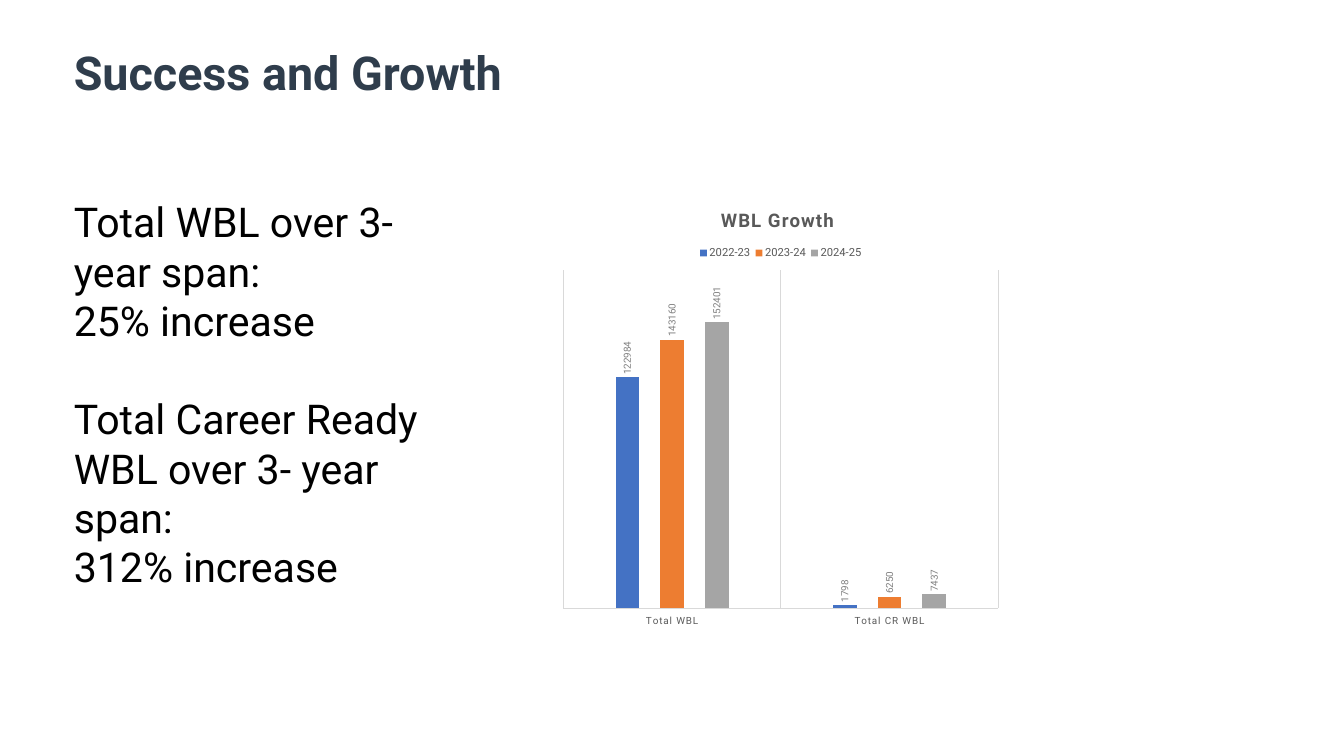
from typing import NamedTuple

from lxml.etree import SubElement
from pptx import Presentation
from pptx.chart.data import CategoryChartData
from pptx.dml.color import RGBColor
from pptx.enum.chart import XL_CHART_TYPE as ChartType
from pptx.enum.chart import XL_LABEL_POSITION as LabelPosition
from pptx.enum.chart import XL_LEGEND_POSITION as LegendPosition
from pptx.enum.chart import XL_TICK_LABEL_POSITION as TickLabelPosition
from pptx.enum.chart import XL_TICK_MARK as TickMark
from pptx.oxml.ns import qn
from pptx.util import Inches, Pt

FONT = "Roboto"
COLORS = {
    "title": "2F3D4C",
    "body": "000000",
    "chart_text": "595959",
    "label": "808080",
    "grid": "D9D9D9",
}


class YearSeries(NamedTuple):
    name: str
    values: tuple[int, int]
    color: str


class Finding(NamedTuple):
    measure: str
    increase: str


CATEGORIES = ("Total WBL", "Total CR WBL")
YEARS = (
    YearSeries("2022-23", (122984, 1798), "4472C4"),
    YearSeries("2023-24", (143160, 6250), "ED7D31"),
    YearSeries("2024-25", (152401, 7437), "A5A5A5"),
)
FINDINGS = (
    Finding("Total WBL over 3-year span:", "25% increase"),
    Finding("Total Career Ready WBL over 3- year span:", "312% increase"),
)


def style_font(font, size: float, color: str, bold: bool = False) -> None:
    font.name, font.size, font.bold = FONT, Pt(size), bold
    font.color.rgb = RGBColor.from_string(color)


def style_line(line) -> None:
    line.color.rgb = RGBColor.from_string(COLORS["grid"])
    line.width = Pt(0.75)


def add_text_box(slide, left: float, top: float, width: float, height: float):
    box = slide.shapes.add_textbox(
        Inches(left), Inches(top), Inches(width), Inches(height))
    box.text_frame.word_wrap = True
    return box.text_frame


def add_title(slide) -> None:
    frame = add_text_box(slide, 1, 0.6, 17.99, 1.2)
    frame.text = "Success and Growth"
    style_font(frame.paragraphs[0].runs[0].font, 50, COLORS["title"], True)


def add_findings(slide) -> None:
    frame = add_text_box(slide, 1, 2.88, 5.58, 7.25)
    for index, finding in enumerate(FINDINGS):
        for text in finding:
            para = frame.add_paragraph() if frame.text else frame.paragraphs[0]
            para.text = text
            style_font(para.runs[0].font, 44, COLORS["body"])
            if index and text == finding.measure:
                para.space_before = Pt(52.8)


def place(element, index: int, **fractions: float) -> None:
    """Give a chart part a manual layout in fractions of the chart."""
    for old in element.findall(qn("c:layout")):
        element.remove(old)
    layout = SubElement(element, qn("c:layout"))
    element.insert(index, layout)
    manual = SubElement(layout, qn("c:manualLayout"))
    if "inner" in fractions:
        fractions.pop("inner")
        SubElement(manual, qn("c:layoutTarget"), val="inner")
    for key in ("x", "y"):
        SubElement(manual, qn(f"c:{key}Mode"), val="edge")
    for key, value in fractions.items():
        SubElement(manual, qn(f"c:{key}"), val=str(value))


def style_axes(chart) -> None:
    axis = chart.category_axis
    axis.major_tick_mark = axis.minor_tick_mark = TickMark.NONE
    axis.tick_label_position = TickLabelPosition.LOW
    axis.has_major_gridlines = True
    style_line(axis.major_gridlines.format.line)
    style_line(axis.format.line)
    style_font(axis.tick_labels.font, 10.6, COLORS["chart_text"])
    axis.tick_labels.font._element.set("spc", "100")

    chart.value_axis.visible = False
    chart.value_axis.has_major_gridlines = False
    chart.value_axis.minimum_scale = 0
    chart.value_axis.maximum_scale = 180000


def style_series(series, year: YearSeries) -> None:
    series.format.fill.solid()
    series.format.fill.fore_color.rgb = RGBColor.from_string(year.color)
    series.invert_if_negative = False
    labels = series.data_labels
    labels.show_value = True
    labels.position = LabelPosition.OUTSIDE_END
    style_font(labels.font, 10.6, COLORS["label"])
    body = labels._element.find(qn("c:txPr")).find(qn("a:bodyPr"))
    body.set("rot", "-5400000")
    body.set("vert", "horz")


def add_growth_chart(slide) -> None:
    data = CategoryChartData()
    data.categories = CATEGORIES
    for year in YEARS:
        data.add_series(year.name, year.values)
    chart = slide.shapes.add_chart(
        ChartType.COLUMN_CLUSTERED, Inches(8.25), Inches(2.85),
        Inches(6.74), Inches(6.53), data).chart
    style_font(chart.font, 10, COLORS["body"])

    chart.has_title = True
    title = chart.chart_title
    title.text_frame.text = "WBL Growth"
    font = title.text_frame.paragraphs[0].runs[0].font
    style_font(font, 20, COLORS["chart_text"], True)
    font._element.set("spc", "100")
    place(title._element, 1, x=0.36, y=0.03)

    chart.has_legend = True
    chart.legend.position = LegendPosition.TOP
    chart.legend.include_in_layout = False
    style_font(chart.legend.font, 12, COLORS["chart_text"])

    plot = chart.plots[0]
    plot.gap_width, plot.overlap = 444, -90
    plot.vary_by_categories = False
    for series, year in zip(plot.series, YEARS):
        style_series(series, year)
    style_axes(chart)
    place(plot._element.getparent(), 0,
          inner=1, x=0.02, y=0.18, w=0.96, h=0.77)
    place(chart.legend._element, 1, x=0.31, y=0.12, w=0.38, h=0.04)


def main() -> None:
    deck = Presentation()
    deck.slide_width, deck.slide_height = Inches(20), Inches(11.25)
    slide = deck.slides.add_slide(deck.slide_layouts[6])
    add_title(slide)
    add_findings(slide)
    add_growth_chart(slide)
    deck.save("out.pptx")


if __name__ == "__main__":
    main()
